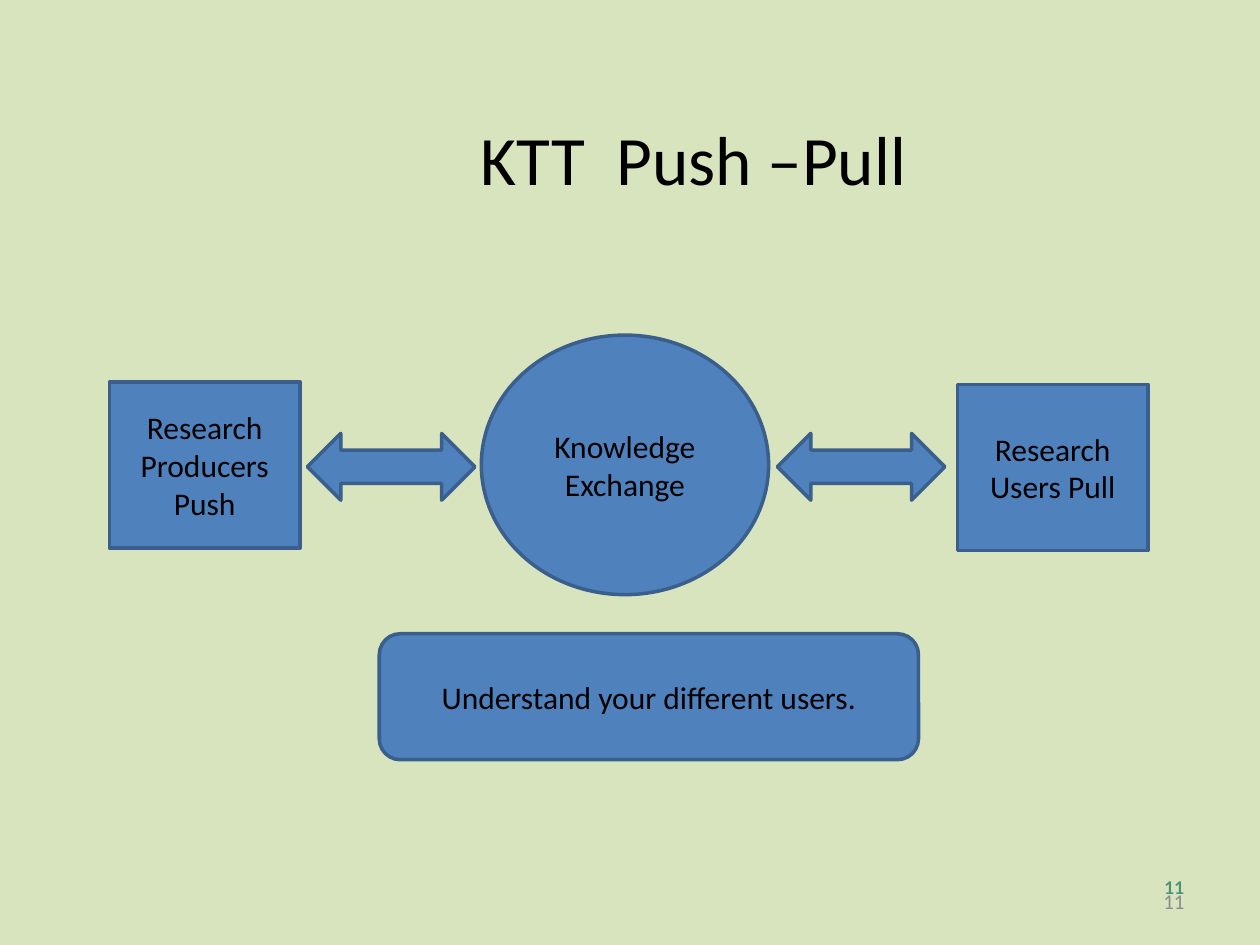
import pptx
import pptx.dml.color
import pptx.enum.shapes
import pptx.enum.text
import pptx.util
from pptx.util import Inches

COLORS = {
    "background": "D7E4BD",
    "fill": "4F81BD",
    "outline": "3A5F8C",
    "text": "000000",
    "gray": "8C8C8C",
    "green": "4D917B",
}
SHAPES = pptx.enum.shapes.MSO_SHAPE
ALIGN = pptx.enum.text.PP_ALIGN
ANCHOR = pptx.enum.text.MSO_ANCHOR


def color(name):
    return pptx.dml.color.RGBColor.from_string(COLORS[name])


def write_text(shape, text, size, color_name="text", align=ALIGN.CENTER,
               anchor=ANCHOR.MIDDLE, font_name="Calibri", bold=False):
    frame = shape.text_frame
    frame.word_wrap = True
    frame.auto_size = pptx.enum.text.MSO_AUTO_SIZE.NONE
    frame.vertical_anchor = anchor
    frame.text = text
    for paragraph in frame.paragraphs:
        paragraph.alignment = align
        paragraph.font.name = font_name
        paragraph.font.size = pptx.util.Pt(size)
        paragraph.font.bold = bold
        paragraph.font.color.rgb = color(color_name)


def add_title(slide, text):
    title = slide.shapes.title
    title.left, title.top = Inches(1.01), Inches(0.86)
    title.width, title.height = Inches(8.99), Inches(0.79)
    write_text(title, text, 39.6)


def add_page_number(slide, top, height, size, color_name, **style):
    box = slide.shapes.add_textbox(Inches(7.17), Inches(top), Inches(2.33), Inches(height))
    write_text(box, "11", size, color_name, ALIGN.RIGHT, **style)


def add_block(slide, kind, left, top, width, height, text=None):
    shape = slide.shapes.add_shape(
        kind, Inches(left), Inches(top), Inches(width), Inches(height))
    shape.shadow.inherit = False
    shape.fill.solid()
    shape.fill.fore_color.rgb = color("fill")
    shape.line.color.rgb = color("outline")
    shape.line.width = pptx.util.Pt(2)
    if text:
        write_text(shape, text, 18)


def main():
    presentation = pptx.Presentation()
    presentation.slide_width, presentation.slide_height = Inches(10), Inches(7.5)
    slide = presentation.slides.add_slide(presentation.slide_layouts[5])
    slide.background.fill.solid()
    slide.background.fill.fore_color.rgb = color("background")

    add_page_number(slide, 6.95, 0.4, 12, "gray")
    add_title(slide, "KTT  Push –Pull")
    add_page_number(slide, 6.91, 0.31, 10, "green",
                    anchor=ANCHOR.TOP, font_name="Lato", bold=True)

    add_block(slide, SHAPES.RECTANGLE, 0.87, 3.03, 1.51, 1.32, "Research Producers Push")
    add_block(slide, SHAPES.RECTANGLE, 7.6, 3.05, 1.51, 1.32, "Research\nUsers Pull")
    add_block(slide, SHAPES.OVAL, 3.82, 2.66, 2.28, 2.06, "Knowledge Exchange")
    for left in (2.44, 6.17):
        add_block(slide, SHAPES.LEFT_RIGHT_ARROW, left, 3.44, 1.33, 0.53)
    add_block(slide, SHAPES.ROUNDED_RECTANGLE, 3.01, 5.03, 4.28, 1,
              "Understand your different users.")

    presentation.save("out.pptx")


if __name__ == "__main__":
    main()
